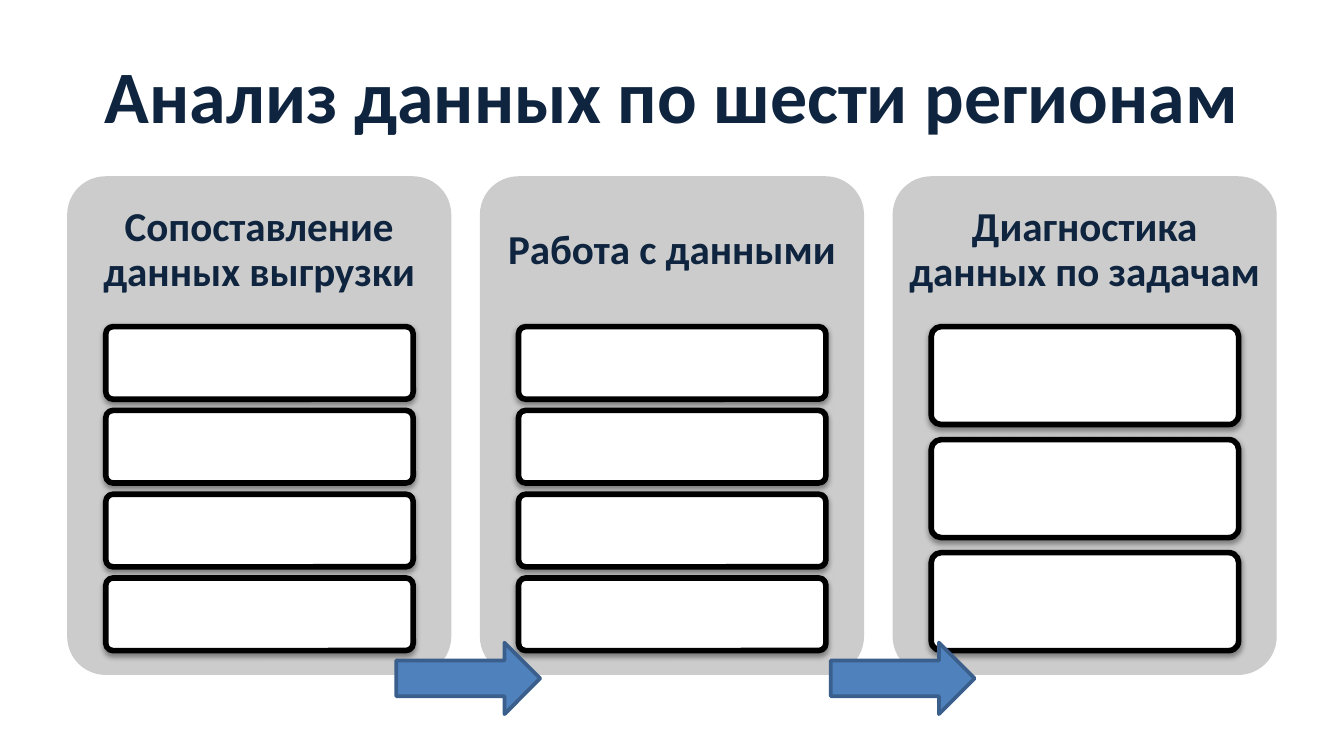
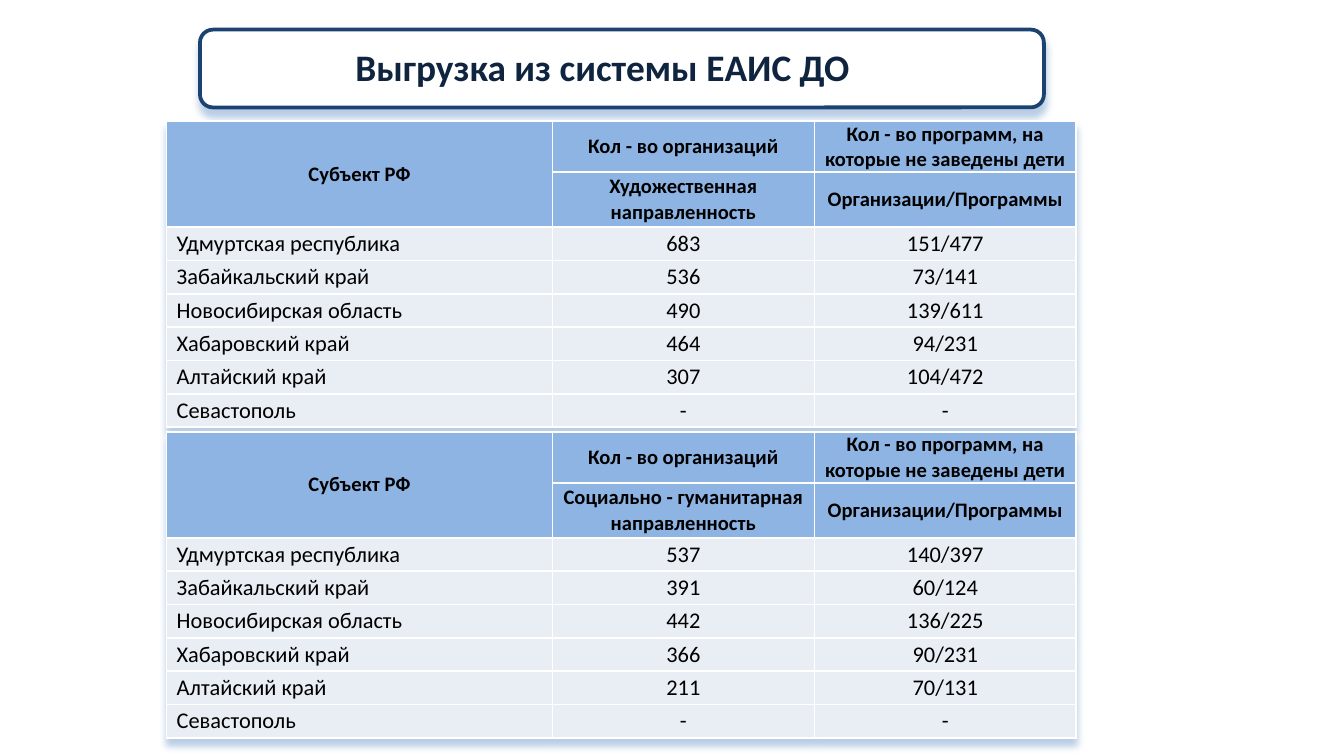
from dataclasses import dataclass

from lxml import etree
from pptx import Presentation
from pptx.dml.color import RGBColor
from pptx.enum import shapes, text
from pptx.oxml import ns
from pptx.util import Cm, Pt


@dataclass(frozen=True)
class Theme:
    font: str = "Calibri"
    navy: str = "0F243E"
    black: str = "000000"
    white: str = "FFFFFF"
    panel: str = "CCCCCC"
    arrow: str = "4F81BD"
    arrow_edge: str = "3A5F8C"
    plate_edge: str = "1C4271"
    header: str = "8EB4E3"
    row: str = "E9EDF4"
    glow: str = "B9CDE5"
    title_size: float = 39.6
    heading_size: float = 22
    plate_size: float = 20
    header_size: float = 11
    cell_size: float = 12


THEME = Theme()
CARD_SHADOW = (THEME.black, 38, 3.1, 1.6)
PLATE_SHADOW = (THEME.glow, 100, 4, 4)

PANELS = [
    ("Сопоставление данных выгрузки", 4),
    ("Работа с данными", 4),
    ("Диагностика данных по задачам", 3),
]
PANEL_LEFT, PANEL_TOP, PANEL_WIDTH, PANEL_HEIGHT = 1.27, 3.33, 7.26, 9.42
PANEL_STEP = 7.8
HEADING_HEIGHT = 2.82
CARD_INSET, CARD_TOP, CARD_WIDTH = 0.73, 6.17, 5.81
CARD_STACK = 6.12
CARD_GAP_RATIO = 2 / 13

REGIONS = [
    "Удмуртская республика",
    "Забайкальский край",
    "Новосибирская область",
    "Хабаровский край",
    "Алтайский край",
    "Севастополь",
]
REGION_TABLES = [
    (
        2.29,
        "Художественная направленность",
        ["683", "536", "490", "464", "307", "-"],
        ["151/477", "73/141", "139/611", "94/231", "104/472", "-"],
    ),
    (
        8.16,
        "Социально - гуманитарная направленность",
        ["537", "391", "442", "366", "211", "-"],
        ["140/397", "60/124", "136/225", "90/231", "70/131", "-"],
    ),
]
COLUMN_WIDTHS = [7.29, 4.95, 4.95]
ROW_HEIGHTS = [0.95, 1.04] + [0.63] * len(REGIONS)


def add_shadow(effects, color, opacity, blur, distance):
    shadow = etree.SubElement(
        effects,
        ns.qn("a:outerShdw"),
        blurRad=str(Pt(blur)),
        dist=str(Pt(distance)),
        dir="5400000",
        rotWithShape="0",
    )
    tint = etree.SubElement(shadow, ns.qn("a:srgbClr"), val=color)
    etree.SubElement(tint, ns.qn("a:alpha"), val=str(opacity * 1000))


def add_block(page, kind, place, fill, line=None, shadow=None, corner=None):
    block = page.shapes.add_shape(kind, *map(Cm, place))
    block.fill.solid()
    block.fill.fore_color.rgb = RGBColor.from_string(fill)
    if line:
        color, width = line
        block.line.color.rgb = RGBColor.from_string(color)
        block.line.width = Pt(width)
    else:
        block.line.fill.background()
    block.shadow.inherit = False
    if shadow:
        add_shadow(block.element.spPr.find(ns.qn("a:effectLst")), *shadow)
    if corner:
        block.adjustments[0] = corner
    return block


def write(frame, words, size, color, bold=True, align=text.PP_ALIGN.CENTER):
    frame.text = words
    para = frame.paragraphs[0]
    para.alignment = align
    for span in para.runs:
        span.font.name = THEME.font
        span.font.size = Pt(size)
        span.font.bold = bold
        span.font.color.rgb = RGBColor.from_string(color)
    return para


def set_insets(frame, inset):
    frame.margin_left = frame.margin_right = Cm(inset)
    frame.margin_top = frame.margin_bottom = Cm(inset)
    frame.word_wrap = True
    frame.vertical_anchor = text.MSO_ANCHOR.MIDDLE


def set_title(page, words, place, size):
    title = page.shapes.title
    title.left, title.top, title.width, title.height = map(Cm, place)
    title.text_frame.auto_size = text.MSO_AUTO_SIZE.NONE
    title.text_frame.vertical_anchor = text.MSO_ANCHOR.MIDDLE
    write(title.text_frame, words, size, THEME.navy)
    return title


def add_panel(page, left, heading, card_count):
    rounded = shapes.MSO_SHAPE.ROUNDED_RECTANGLE
    place = (left, PANEL_TOP, PANEL_WIDTH, PANEL_HEIGHT)
    add_block(page, rounded, place, THEME.panel, corner=0.1)
    box = page.shapes.add_textbox(
        *map(Cm, (left, PANEL_TOP, PANEL_WIDTH, HEADING_HEIGHT))
    )
    set_insets(box.text_frame, 0.23)
    para = write(box.text_frame, heading, THEME.heading_size, THEME.navy)
    para.line_spacing = 0.9

    height = CARD_STACK / (card_count + (card_count - 1) * CARD_GAP_RATIO)
    step = height * (1 + CARD_GAP_RATIO)
    for index in range(card_count):
        place = (left + CARD_INSET, CARD_TOP + index * step, CARD_WIDTH, height)
        add_block(
            page, rounded, place, THEME.white, (THEME.black, 3), CARD_SHADOW, 0.1
        )


def set_borders(cell):
    properties = cell._tc.get_or_add_tcPr()
    for index, side in enumerate(("lnL", "lnR", "lnT", "lnB")):
        line = etree.Element(ns.qn(f"a:{side}"), w=str(Pt(1)))
        fill = etree.SubElement(line, ns.qn("a:solidFill"))
        etree.SubElement(fill, ns.qn("a:srgbClr"), val=THEME.white)
        properties.insert(index, line)


def fill_cell(cell, words, is_header, is_region):
    cell.fill.solid()
    cell.fill.fore_color.rgb = RGBColor.from_string(
        THEME.header if is_header else THEME.row
    )
    set_borders(cell)
    cell.margin_left = Cm(0.19 if is_region else 0)
    cell.margin_right = cell.margin_top = cell.margin_bottom = 0
    cell.vertical_anchor = text.MSO_ANCHOR.MIDDLE
    size = THEME.header_size if is_header else THEME.cell_size
    align = text.PP_ALIGN.LEFT if is_region else text.PP_ALIGN.CENTER
    write(cell.text_frame, words, size, THEME.black, is_header, align)


def add_region_table(page, top, direction, organizations, programs):
    rows = [
        (
            "Субъект РФ",
            "Кол - во организаций",
            "Кол - во программ, на которые не заведены дети",
        ),
        ("", direction, "Организации/Программы"),
        *zip(REGIONS, organizations, programs),
    ]
    place = (3.15, top, sum(COLUMN_WIDTHS), sum(ROW_HEIGHTS))
    table = page.shapes.add_table(
        len(rows), len(COLUMN_WIDTHS), *map(Cm, place)
    ).table
    for column, width in zip(table.columns, COLUMN_WIDTHS):
        column.width = Cm(width)
    for row, height in zip(table.rows, ROW_HEIGHTS):
        row.height = Cm(height)
    for row_index, values in enumerate(rows):
        is_header = row_index < 2
        for column_index, words in enumerate(values):
            is_region = column_index == 0 and not is_header
            fill_cell(
                table.cell(row_index, column_index), words, is_header, is_region
            )
    table.cell(0, 0).merge(table.cell(1, 0))
    effects = etree.Element(ns.qn("a:effectLst"))
    add_shadow(effects, *PLATE_SHADOW)
    table._tbl.tblPr.insert(0, effects)


def build_analysis(page):
    set_title(
        page,
        "Анализ данных по шести регионам",
        (1.27, 0.58, 22.86, 2.39),
        THEME.title_size,
    )
    for index, (heading, card_count) in enumerate(PANELS):
        add_panel(page, PANEL_LEFT + index * PANEL_STEP, heading, card_count)
    for left in (7.49, 15.7):
        add_block(
            page,
            shapes.MSO_SHAPE.RIGHT_ARROW,
            (left, 12.14, 2.72, 1.35),
            THEME.arrow,
            (THEME.arrow_edge, 2),
        )


def build_export(page):
    title = set_title(
        page,
        "Выгрузка из системы ЕАИС ДО",
        (2.31, 0.33, 18.16, 1.96),
        THEME.plate_size,
    )
    set_insets(title.text_frame, 0.48)
    title.text_frame.paragraphs[0].line_spacing = 0.9
    plate = add_block(
        page,
        shapes.MSO_SHAPE.ROUNDED_RECTANGLE,
        (3.78, 0.56, 15.95, 1.47),
        THEME.white,
        (THEME.plate_edge, 2),
        PLATE_SHADOW,
    )
    title.element.addprevious(plate.element)
    for table in REGION_TABLES:
        add_region_table(page, *table)


def main():
    deck = Presentation()
    deck.slide_width, deck.slide_height = Cm(25.4), Cm(14.28)
    title_only = deck.slide_layouts[5]
    for build in (build_analysis, build_export):
        build(deck.slides.add_slide(title_only))
    deck.save("out.pptx")


if __name__ == "__main__":
    main()
